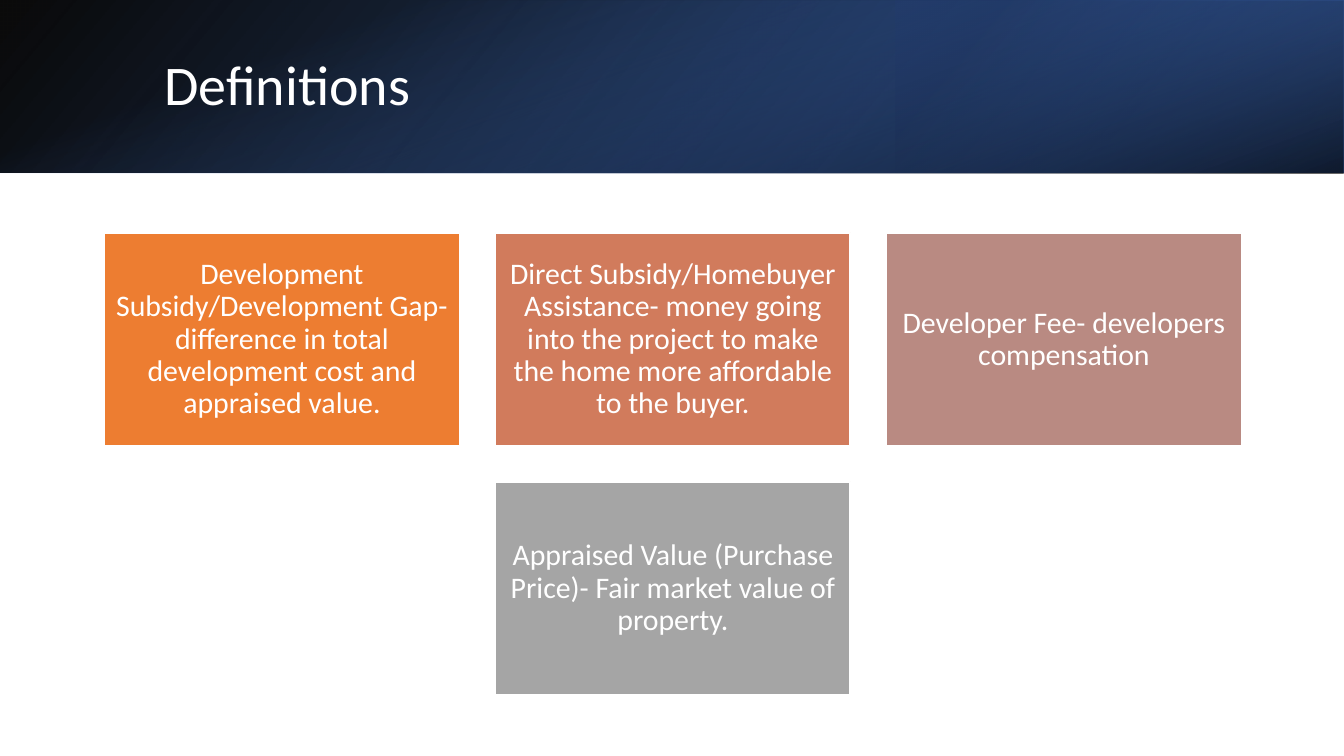
import pptx
import pptx.util
import pptx.dml.color
import pptx.enum.shapes
import pptx.enum.text
import pptx.oxml.ns
import lxml.etree

# Content
TITLE = "Definitions"
ROWS = [
    [
        ("Development Subsidy/Development Gap- difference in total "
         "development cost and appraised value.", "orange"),
        ("Direct Subsidy/Homebuyer Assistance- money going into the project "
         "to make the home more affordable to the buyer.", "coral"),
        ("Developer Fee- developers compensation", "rose"),
    ],
    [
        ("Appraised Value (Purchase Price)- Fair market value of property.",
         "gray"),
    ],
]
HEX = {
    "white": "FFFFFF", "black": "000000", "navy": "203864",
    "deep": "2F5597", "blue": "4472C4", "orange": "ED7D31",
    "coral": "D17B5C", "rose": "B98A82", "gray": "A5A5A5",
}
FONT = "Calibri"

# Sizes in px
WIDE, HIGH, HEAD = 1344, 756, 173
CARD_W, CARD_H, GAP = 355, 213, 36
MID, TOP, PAD = 673, 233, 9
SIDE = (WIDE - HEAD) // 2

# Header layers: box, turn, flip, angle, stops of (place %, colour, opacity %)
BANDS = [
    ((0, 0, WIDE, HEAD), 0, True, 140,
     [(0, "black", 96), (100, "deep", 100)]),
    ((896, 0, 448, HEAD), 180, True, 320,
     [(19, "navy", 68), (100, "blue", 79)]),
    ((SIDE, -SIDE, HEAD, WIDE), 90, False, 340,
     [(23, "blue", 0), (99, "black", 74)]),
]


def px(num):
    return pptx.util.Emu(round(num * 914400 / 134.4))


def rgb(name):
    return pptx.dml.color.RGBColor.from_string(HEX[name])


def add_rect(box):
    kind = pptx.enum.shapes.MSO_SHAPE.RECTANGLE
    rect = slide.shapes.add_shape(kind, *map(px, box))
    rect.shadow.inherit = False
    return rect


def add_band(box, turn, flip, angle, stops):
    band = add_rect(box)
    band.rotation = turn
    band.line.fill.background()
    if flip:
        band._element.spPr.find(pptx.oxml.ns.qn("a:xfrm")).set("flipH", "1")
    fill = band.fill
    fill.gradient()
    fill.gradient_angle = 360 - angle
    for stop, (place, name, solid) in zip(fill.gradient_stops, stops):
        stop.position = place / 100
        stop.color.rgb = rgb(name)
    # Opacity of each stop
    tag = pptx.oxml.ns.qn("a:srgbClr")
    for node, (_, _, solid) in zip(band._element.spPr.iter(tag), stops):
        alpha = lxml.etree.SubElement(node, pptx.oxml.ns.qn("a:alpha"))
        alpha.set("val", str(solid * 1000))


def write(frame, text, size, align):
    frame.word_wrap = True
    frame.vertical_anchor = pptx.enum.text.MSO_ANCHOR.MIDDLE
    para = frame.paragraphs[0]
    para.alignment = align
    para.line_spacing = 0.9
    run = para.add_run()
    run.text = text
    run.font.name = FONT
    run.font.size = pptx.util.Pt(size)
    run.font.color.rgb = rgb("white")


def add_card(left, top, text, name):
    card = add_rect((left, top, CARD_W, CARD_H))
    card.fill.solid()
    card.fill.fore_color.rgb = rgb(name)
    card.line.color.rgb = rgb("white")
    card.line.width = pptx.util.Pt(1)
    frame = card.text_frame
    frame.margin_left = frame.margin_right = px(PAD)
    frame.margin_top = frame.margin_bottom = px(PAD)
    write(frame, text, 16, pptx.enum.text.PP_ALIGN.CENTER)


deck = pptx.Presentation()
deck.slide_width, deck.slide_height = px(WIDE), px(HIGH)
slide = deck.slides.add_slide(deck.slide_layouts[5])

# Header
for band in BANDS:
    add_band(*band)

# Title, brought in front of the header
title = slide.shapes.title
title.left, title.top, title.width, title.height = map(px, (151, 39, 1107, 97))
write(title.text_frame, TITLE, 30, pptx.enum.text.PP_ALIGN.LEFT)
slide.shapes._spTree.append(title._element)

# Cards, each row centred
for row, cards in enumerate(ROWS):
    span = len(cards) * (CARD_W + GAP) - GAP
    for col, (text, name) in enumerate(cards):
        left = MID - span / 2 + col * (CARD_W + GAP)
        add_card(left, TOP + row * (CARD_H + GAP), text, name)

deck.save("out.pptx")
